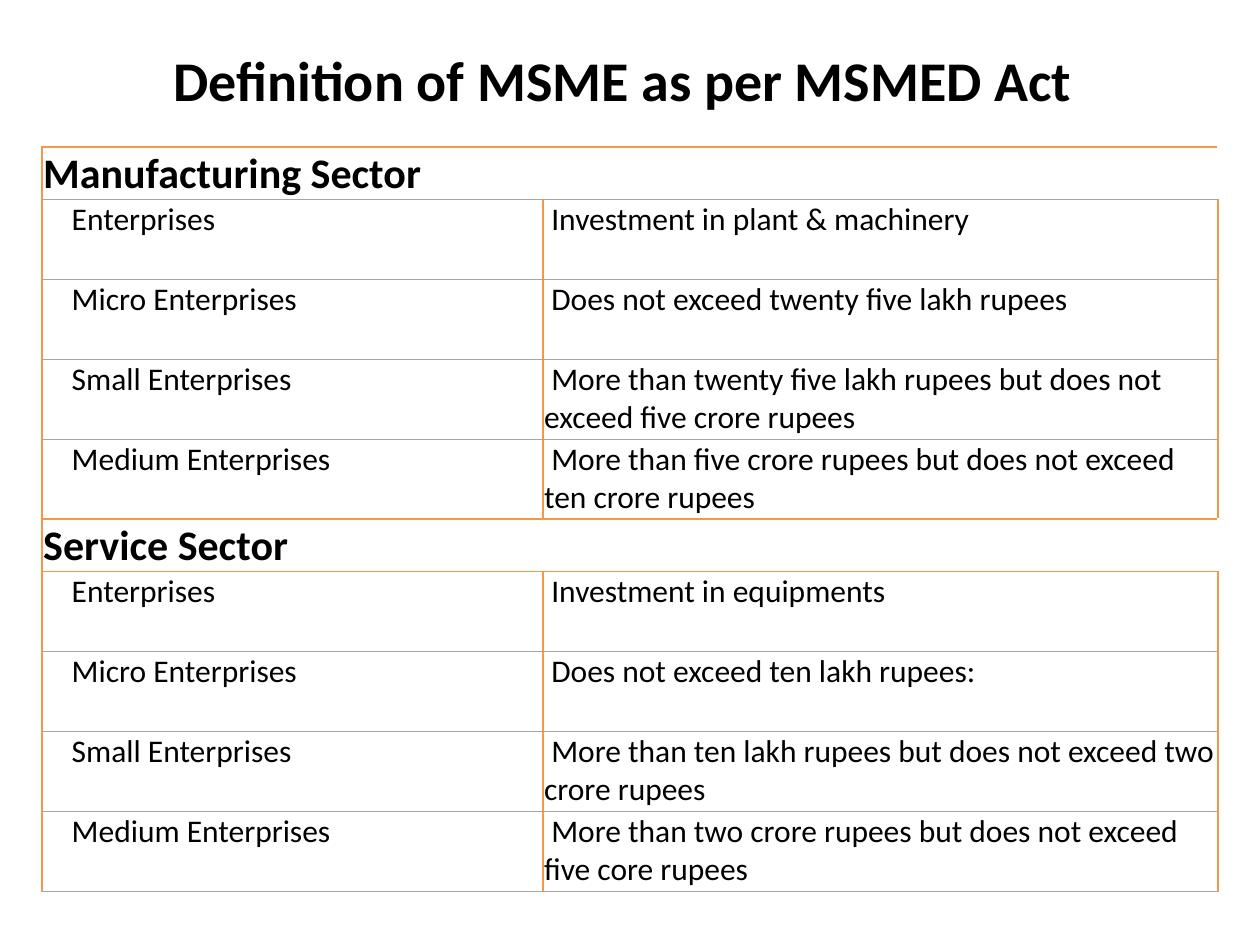
from dataclasses import dataclass

from lxml.etree import SubElement
from pptx import Presentation
from pptx.dml.color import RGBColor
from pptx.enum.text import MSO_ANCHOR, PP_ALIGN
from pptx.oxml.ns import qn
from pptx.util import Pt


@dataclass(frozen=True)
class Theme:
    font: str = "Calibri"
    text: str = "000000"
    accent: str = "F79646"
    rule: str = "A6A6A6"
    title_size: int = 32
    sector_size: int = 24
    body_size: int = 18


THEME = Theme()
SECTOR_HEIGHT, BODY_HEIGHT = 29.9, 45.7
NAME_SHARE = 0.426
NAME_INDENT, RULE_INDENT = 16.3, 4.1
NAMES = ["Enterprises", "Micro Enterprises", "Small Enterprises", "Medium Enterprises"]
SECTORS = {
    "Manufacturing Sector": [
        "Investment in plant & machinery",
        "Does not exceed twenty five lakh rupees",
        "More than twenty five lakh rupees but does not exceed five crore rupees",
        "More than five crore rupees but does not exceed ten crore rupees",
    ],
    "Service Sector": [
        "Investment in equipments",
        "Does not exceed ten lakh rupees:",
        "More than ten lakh rupees but does not exceed two crore rupees",
        "More than two crore rupees but does not exceed five core rupees",
    ],
}


def set_attributes(target, values):
    for name, value in values.items():
        setattr(target, name, value)


def write(frame, text, size, bold=False):
    para = frame.paragraphs[0]
    span = para.add_run()
    span.text = text
    set_attributes(span.font, {"name": THEME.font, "size": Pt(size), "bold": bold})
    span.font.color.rgb = RGBColor.from_string(THEME.text)
    return para


def add_title(page, left, top, width, height):
    box = page.shapes.add_textbox(Pt(left), Pt(top), Pt(width), Pt(height))
    set_attributes(box.text_frame, {"word_wrap": True, "vertical_anchor": MSO_ANCHOR.MIDDLE})
    para = write(box.text_frame, "Definition of MSME as per MSMED Act", THEME.title_size, True)
    para.alignment = PP_ALIGN.CENTER


def format_cell(cell, edges):
    """Clear the fill, tighten the margins and draw edges given as side: (colour, width)."""
    set_attributes(cell, {"margin_left": Pt(0.7), "margin_right": Pt(0.7),
                          "margin_top": Pt(0.7), "margin_bottom": Pt(0),
                          "vertical_anchor": MSO_ANCHOR.TOP})
    properties = cell._tc.get_or_add_tcPr()
    for side in "LRTB":
        if side in edges:
            colour, width = edges[side]
            line = SubElement(properties, qn(f"a:ln{side}"), w=str(Pt(width)))
            fill = SubElement(line, qn("a:solidFill"))
            SubElement(fill, qn("a:srgbClr"), val=colour)
    cell.fill.background()


def add_sector_table(page, left, top, width):
    block = 1 + len(NAMES)
    count = block * len(SECTORS)
    heights = [BODY_HEIGHT if row % block else SECTOR_HEIGHT for row in range(count)]
    frame = page.shapes.add_table(count, 2, Pt(left), Pt(top), Pt(width), Pt(sum(heights)))
    table = frame.table
    set_attributes(table, {"first_row": False, "horz_banding": False})
    for column, share in zip(table.columns, (NAME_SHARE, 1 - NAME_SHARE)):
        column.width = Pt(round(width * share, 2))
    for row, height in zip(table.rows, heights):
        row.height = Pt(height)

    accent, thin = (THEME.accent, 1), (THEME.rule, 0.5)
    # The table top and both sides of the second sector heading are accented.
    levels = [accent if level in (0, block, block + 1) else thin for level in range(count + 1)]
    for row in range(count):
        for column in range(2):
            edges = {"L": accent, "R": accent, "T": levels[row], "B": levels[row + 1]}
            if row % block == 0:
                del edges["L" if column else "R"]
            format_cell(table.cell(row, column), edges)

    for index, (sector, limits) in enumerate(SECTORS.items()):
        start = index * block
        heading = table.cell(start, 0)
        heading.merge(table.cell(start, 1))
        write(heading.text_frame, sector, THEME.sector_size, True)
        for row, texts in enumerate(zip(NAMES, limits), start + 1):
            for column, text in enumerate(texts):
                para = write(table.cell(row, column).text_frame, text, THEME.body_size)
                margin, indent = (0, RULE_INDENT) if column else (NAME_INDENT, 0)
                properties = para._p.get_or_add_pPr()
                properties.set("marL", str(Pt(margin)))
                properties.set("indent", str(Pt(indent)))


def main():
    deck = Presentation()
    set_attributes(deck, {"slide_width": Pt(720), "slide_height": Pt(540)})
    page = deck.slides.add_slide(deck.slide_layouts[6])
    add_title(page, 14, 0, 684, 90)
    add_sector_table(page, 24, 84, 672)
    deck.save("out.pptx")


if __name__ == "__main__":
    main()
